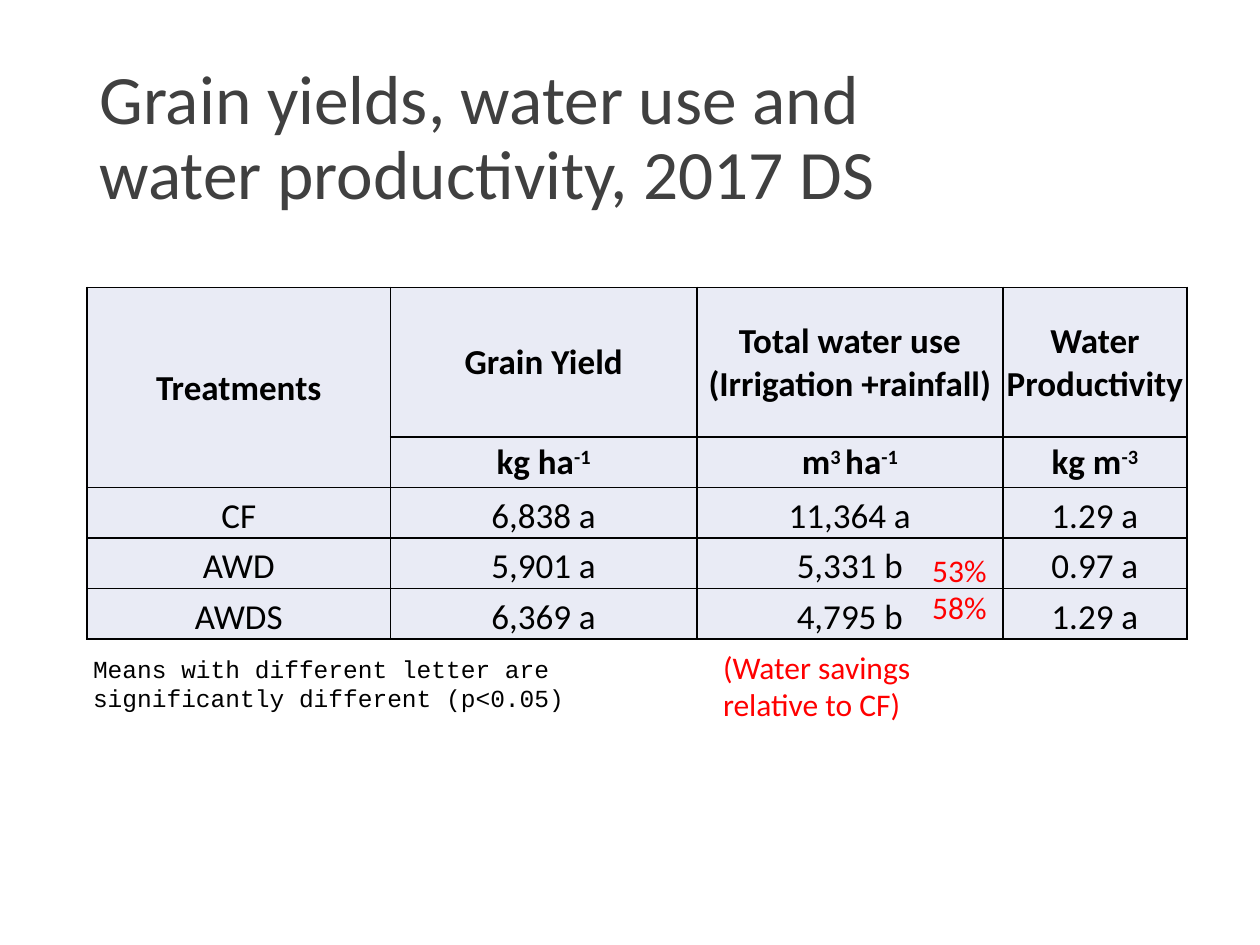
from lxml import etree
from pptx import Presentation
from pptx.dml.color import RGBColor
from pptx.enum.text import MSO_ANCHOR, MSO_AUTO_SIZE, PP_ALIGN
from pptx.oxml import parse_xml
from pptx.oxml.ns import nsdecls
from pptx.util import Inches, Pt

TITLE = "Grain yields, water use and water productivity, 2017 DS"
HEADER_ROWS = 2
ROWS = [
    ["Treatments", "Grain Yield", "Total water use (Irrigation +rainfall)", "Water Productivity"],
    ["", "kg ha^-1", "m^3 ^ha^-1", "kg m^-3"],
    ["CF", "6,838 a", "11,364 a", "1.29 a"],
    ["AWD", "5,901 a", "5,331 b", "0.97 a"],
    ["AWDS", "6,369 a", "4,795 b", "1.29 a"],
]
COL_WIDTHS = [2.41, 2.43, 2.43, 1.46]
ROW_HEIGHTS = [1.19] + [0.4] * 4

BLACK = RGBColor(0x00, 0x00, 0x00)
RED = RGBColor(0xFF, 0x00, 0x00)
GREY = RGBColor(0x40, 0x40, 0x40)
PALE = RGBColor(0xE9, 0xEB, 0xF5)

NOTES = [
    (["(Water savings relative to CF)"], (5.64, 5.09, 2.27, 0.71), "Calibri", 18, RED),
    (["Means with different letter are significantly different (p<0.05)"],
     (0.64, 5.14, 5, 0.57), "Courier New", 14, BLACK),
    (["53%", "58%"], (7.3, 4.32, 0.89, 0.71), "Calibri", 18, RED),
]


def set_font(p, name, size, color, bold=False):
    f = p.font
    f.name, f.size, f.bold = name, Pt(size), bold
    f.color.rgb = color


def add_borders(cell):
    tc_pr = cell._tc.get_or_add_tcPr()
    for i, side in enumerate("LRTB"):
        tc_pr.insert(i, parse_xml(
            f'<a:ln{side} {nsdecls("a")} w="{Pt(1)}"><a:solidFill>'
            f'<a:srgbClr val="{BLACK}"/></a:solidFill></a:ln{side}>'))


def fill_cell(cell, text, header):
    cell.margin_left = cell.margin_right = cell.margin_top = Inches(0.01)
    cell.margin_bottom = 0
    cell.vertical_anchor = MSO_ANCHOR.MIDDLE if header else MSO_ANCHOR.BOTTOM
    cell.fill.solid()
    cell.fill.fore_color.rgb = PALE
    add_borders(cell)
    p = cell.text_frame.paragraphs[0]
    p.alignment = PP_ALIGN.CENTER
    set_font(p, "Calibri", 20, BLACK, header)
    for i, part in enumerate(text.split("^")):
        r = p.add_run()
        r.text = part
        r.font.size, r.font.bold = Pt(20), header
        if i % 2:
            r.font._element.set("baseline", "30000")


def add_title(s):
    sp = s.shapes.title
    sp.left, sp.top, sp.width, sp.height = map(Inches, (0.69, 0.71, 7.22, 0.79))
    tf = sp.text_frame
    tf.text = TITLE
    tf.word_wrap = True
    tf.auto_size = MSO_AUTO_SIZE.NONE
    tf.vertical_anchor = MSO_ANCHOR.MIDDLE
    p = tf.paragraphs[0]
    p.alignment, p.line_spacing = PP_ALIGN.LEFT, 0.9
    set_font(p, "Calibri", 39.6, GREY)


def add_yield_table(s):
    size = map(Inches, (0.69, 2.28, sum(COL_WIDTHS), sum(ROW_HEIGHTS)))
    table = s.shapes.add_table(len(ROWS), len(COL_WIDTHS), *size).table
    for col, width in zip(table.columns, COL_WIDTHS):
        col.width = Inches(width)
    for row, height in zip(table.rows, ROW_HEIGHTS):
        row.height = Inches(height)
    for i, row in enumerate(ROWS):
        for j, text in enumerate(row):
            fill_cell(table.cell(i, j), text, i < HEADER_ROWS)
    table.cell(0, 0).merge(table.cell(HEADER_ROWS - 1, 0))


def add_note(s, lines, box, font, size, color):
    tf = s.shapes.add_textbox(*map(Inches, box)).text_frame
    tf.word_wrap = True
    tf.auto_size = MSO_AUTO_SIZE.SHAPE_TO_FIT_TEXT
    tf.text = "\n".join(lines)
    for p in tf.paragraphs:
        set_font(p, font, size, color)


def main():
    """Build the slide on grain yields and water use."""
    prs = Presentation()
    prs.slide_width, prs.slide_height = Inches(10), Inches(7.5)
    s = prs.slides.add_slide(prs.slide_layouts[5])
    add_title(s)
    add_yield_table(s)
    for note in NOTES:
        add_note(s, *note)
    prs.save("out.pptx")


if __name__ == "__main__":
    main()
